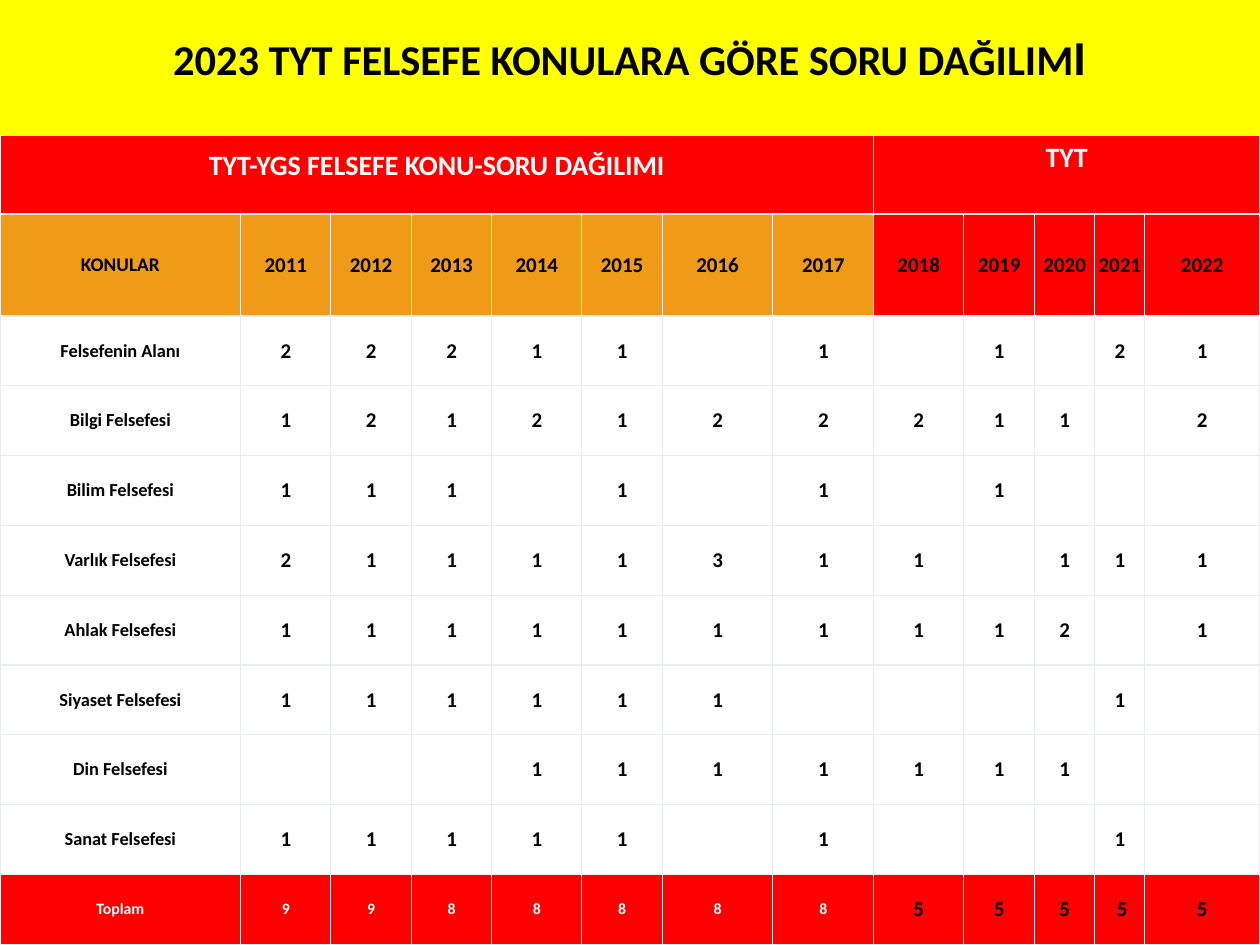
import lxml.etree
import pptx
import pptx.dml.color
import pptx.enum.shapes
import pptx.enum.text
import pptx.oxml.ns
import pptx.util

Pt = pptx.util.Pt
FONT = "Calibri"
COLORS = {
    "black": "000000", "white": "FFFFFF", "yellow": "FFFF00",
    "red": "FF0000", "orange": "EF9B18", "border": "E9ECEF",
}

TITLE = [("2023 TYT FELSEFE KONULARA GÖRE SORU DAĞILIM", 24.3), ("I", 27.9)]
GROUPS = [
    ("TYT-YGS FELSEFE KONU-SORU DAĞILIMI", 0, 7, 10),
    ("TYT", 8, 12, 19.5),
]
YEARS = ["KONULAR"] + [str(year) for year in range(2011, 2023)]
TOPICS = [
    ["Felsefenin Alanı", "2", "2", "2", "1", "1", "", "1", "", "1", "", "2", "1"],
    ["Bilgi Felsefesi", "1", "2", "1", "2", "1", "2", "2", "2", "1", "1", "", "2"],
    ["Bilim Felsefesi", "1", "1", "1", "", "1", "", "1", "", "1", "", "", ""],
    ["Varlık Felsefesi", "2", "1", "1", "1", "1", "3", "1", "1", "", "1", "1", "1"],
    ["Ahlak Felsefesi", "1", "1", "1", "1", "1", "1", "1", "1", "1", "2", "", "1"],
    ["Siyaset Felsefesi", "1", "1", "1", "1", "1", "1", "", "", "", "", "1", ""],
    ["Din Felsefesi", "", "", "", "1", "1", "1", "1", "1", "1", "1", "", ""],
    ["Sanat Felsefesi", "1", "1", "1", "1", "1", "", "1", "", "", "", "1", ""],
]
TOTALS = ["Toplam", "9", "9", "8", "8", "8", "8", "8", "5", "5", "5", " 5", "5"]

WIDTH, HEIGHT, TITLE_HEIGHT = 720, 540, 77.3
COL_WIDTHS = [137.6, 51.5, 46, 46, 51.5, 46, 63.2, 57.6, 51.5, 40.5, 34.4, 28.6, 65.6]
ROW_HEIGHTS = [45, 58.3] + [39.9] * (len(TOPICS) + 1)
FIRST_TYT = GROUPS[1][1]


def rgb(name):
    return pptx.dml.color.RGBColor.from_string(COLORS[name])


def paint(obj, color):
    obj.fill.solid()
    obj.fill.fore_color.rgb = rgb(color)


def write(tf, runs, color):
    p = tf.paragraphs[0]
    p.alignment = pptx.enum.text.PP_ALIGN.CENTER
    for text, size in runs:
        r = p.add_run()
        r.text = text
        r.font.name = FONT
        r.font.size = Pt(size)
        r.font.bold = True
        r.font.color.rgb = rgb(color)


def add_borders(cell):
    tcPr = cell._tc.get_or_add_tcPr()
    qn = pptx.oxml.ns.qn
    for i, side in enumerate(("a:lnL", "a:lnR", "a:lnT", "a:lnB")):
        ln = lxml.etree.Element(qn(side), w=str(Pt(0.75)))
        fill = lxml.etree.SubElement(ln, qn("a:solidFill"))
        lxml.etree.SubElement(fill, qn("a:srgbClr"), val=COLORS["border"])
        tcPr.insert(i, ln)


def fill_cell(cell, text, size, color, fill, bottom=0):
    cell.margin_left = cell.margin_right = cell.margin_top = 0
    cell.margin_bottom = Pt(bottom)
    cell.vertical_anchor = pptx.enum.text.MSO_ANCHOR.MIDDLE
    paint(cell, fill)
    if text:
        write(cell.text_frame, [(text, size)], color)


def add_title(slide):
    sp = slide.shapes.add_shape(
        pptx.enum.shapes.MSO_SHAPE.RECTANGLE, 0, 0, Pt(WIDTH), Pt(TITLE_HEIGHT))
    sp.shadow.inherit = False
    paint(sp, "yellow")
    sp.line.fill.background()
    tf = sp.text_frame
    tf.word_wrap = True
    tf.vertical_anchor = pptx.enum.text.MSO_ANCHOR.MIDDLE
    tf.margin_top = 0
    tf.margin_bottom = Pt(13)
    write(tf, TITLE, "black")


def add_question_table(slide):
    table = slide.shapes.add_table(
        len(ROW_HEIGHTS), len(COL_WIDTHS), 0, Pt(TITLE_HEIGHT),
        Pt(WIDTH), Pt(sum(ROW_HEIGHTS))).table
    table.first_row = table.horz_banding = False
    for column, width in zip(table.columns, COL_WIDTHS):
        column.width = Pt(width)
    for row, height in zip(table.rows, ROW_HEIGHTS):
        row.height = Pt(height)

    for text, first, last, bottom in GROUPS:
        table.cell(0, first).merge(table.cell(0, last))
        fill_cell(table.cell(0, first), text, 16, "white", "red", bottom)
    for c, text in enumerate(YEARS):
        fill = "red" if c >= FIRST_TYT else "orange"
        fill_cell(table.cell(1, c), text, 12 if c else 11, "black", fill)
    for r, topic in enumerate(TOPICS, 2):
        for c, text in enumerate(topic):
            fill_cell(table.cell(r, c), text, 12 if c else 10.5, "black", "white")
    for c, text in enumerate(TOTALS):
        size, color = (12, "black") if c >= FIRST_TYT else (9, "white")
        fill_cell(table.cell(len(ROW_HEIGHTS) - 1, c), text, size, color, "red")
    for cell in table.iter_cells():
        add_borders(cell)


def main():
    prs = pptx.Presentation()
    prs.slide_width, prs.slide_height = Pt(WIDTH), Pt(HEIGHT)
    slide = prs.slides.add_slide(prs.slide_layouts[6])
    add_title(slide)
    add_question_table(slide)
    prs.save("out.pptx")


if __name__ == "__main__":
    main()
